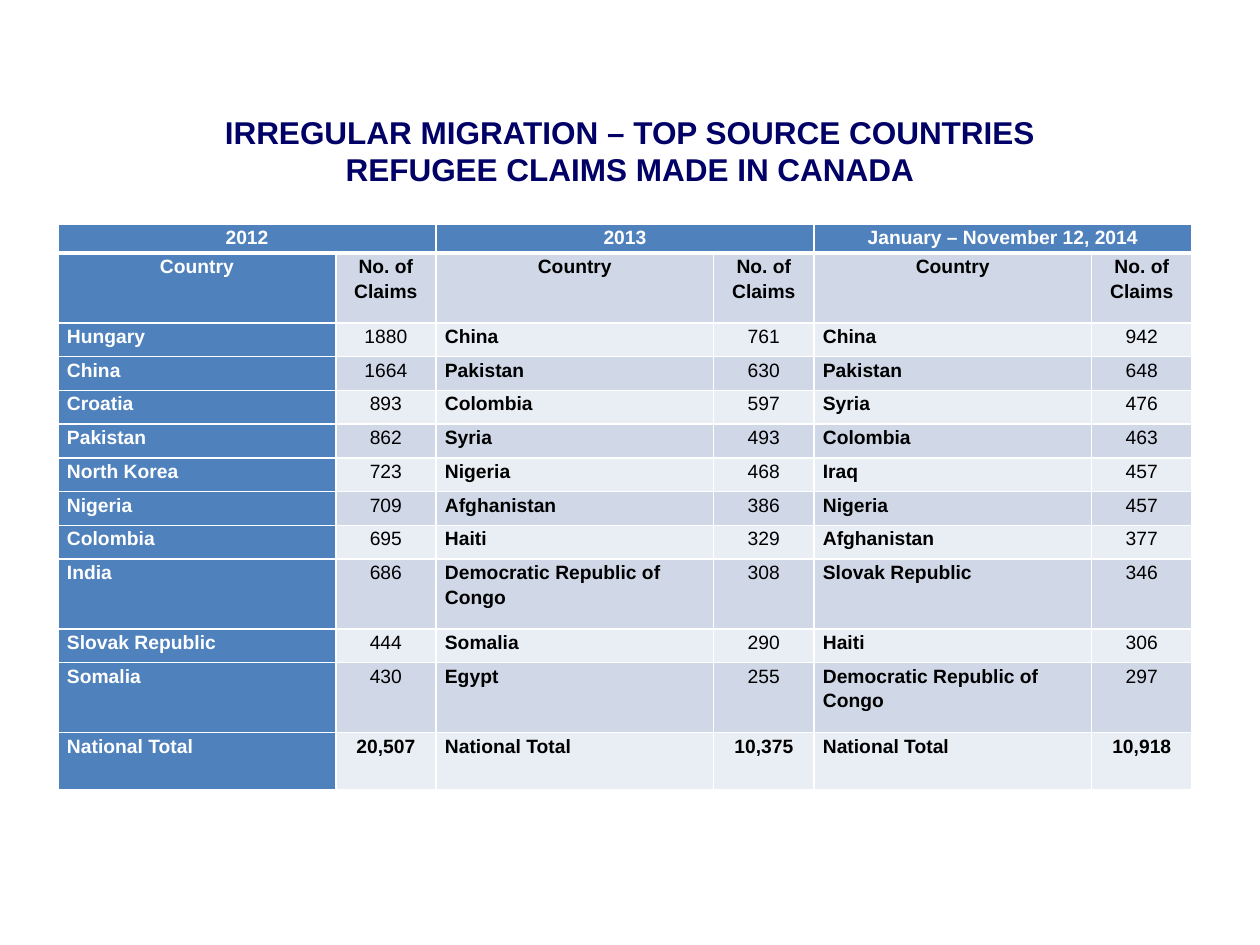
from dataclasses import dataclass

import pptx
import pptx.dml.color
import pptx.enum.text
import pptx.oxml
import pptx.oxml.ns
import pptx.util
from pptx.util import Cm

RGB = pptx.dml.color.RGBColor.from_string
CENTER = pptx.enum.text.PP_ALIGN.CENTER
LEFT = pptx.enum.text.PP_ALIGN.LEFT


@dataclass(frozen=True)
class Theme:
    font: str = "Arial"
    title_size: int = 18
    table_size: int = 11
    title: str = "000066"
    header: str = "4F81BD"
    dark_band: str = "D0D8E8"
    light_band: str = "E9EDF4"
    on_header: str = "FFFFFF"
    body: str = "000000"
    grid: str = "FFFFFF"
    grid_width: int = 1
    header_rule_width: int = 3


THEME = Theme()

TITLE_LINES = (
    "IRREGULAR MIGRATION – TOP SOURCE COUNTRIES",
    "REFUGEE CLAIMS MADE IN CANADA",
)
PERIODS = ("2012", "2013", "January – November 12, 2014")
CLAIMS = (
    ("Hungary", "1880", "China", "761", "China", "942"),
    ("China", "1664", "Pakistan", "630", "Pakistan", "648"),
    ("Croatia", "893", "Colombia", "597", "Syria", "476"),
    ("Pakistan", "862", "Syria", "493", "Colombia", "463"),
    ("North Korea", "723", "Nigeria", "468", "Iraq", "457"),
    ("Nigeria", "709", "Afghanistan", "386", "Nigeria", "457"),
    ("Colombia", "695", "Haiti", "329", "Afghanistan", "377"),
    ("India", "686", "Democratic Republic of Congo", "308", "Slovak Republic", "346"),
    ("Slovak Republic", "444", "Somalia", "290", "Haiti", "306"),
    ("Somalia", "430", "Egypt", "255", "Democratic Republic of Congo", "297"),
)
TOTALS = ("National Total", "20,507", "National Total", "10,375",
          "National Total", "10,918")

COUNTRY_WIDTH, CLAIMS_WIDTH = 5.6, 2.02
PERIOD_HEIGHT, LINE_HEIGHT, TALL_HEIGHT, TOTAL_HEIGHT = 0.58, 0.68, 1.41, 1.15
LONG_NAME = 20  # longer country names wrap and need a tall row


def add_run(paragraph, text, size, color, bold):
    run = paragraph.add_run()
    run.text = text
    run.font.name = THEME.font
    run.font.size = pptx.util.Pt(size)
    run.font.bold = bold
    run.font.color.rgb = RGB(color)


def add_title(slide):
    title = slide.shapes.title
    title.left, title.top = Cm(1.27), Cm(2.13)
    title.width, title.height = Cm(22.86), Cm(1.8)
    frame = title.text_frame
    frame.word_wrap = True
    frame.auto_size = pptx.enum.text.MSO_AUTO_SIZE.NONE
    frame.vertical_anchor = pptx.enum.text.MSO_ANCHOR.MIDDLE
    paragraph = frame.paragraphs[0]
    paragraph.alignment = CENTER
    for number, line in enumerate(TITLE_LINES):
        if number:
            paragraph.add_line_break()
        add_run(paragraph, line, THEME.title_size, THEME.title, True)


def set_borders(cell, row):
    """Draw the white grid, with a heavier rule below the period row."""
    widths = dict.fromkeys(("lnL", "lnR", "lnT", "lnB"), THEME.grid_width)
    if row < 2:
        widths["lnB" if row == 0 else "lnT"] = THEME.header_rule_width
    properties = cell._tc.get_or_add_tcPr()
    for side, width in widths.items():
        properties.append(pptx.oxml.parse_xml(
            f'<a:{side} {pptx.oxml.ns.nsdecls("a")} w="{pptx.util.Pt(width)}">'
            f'<a:solidFill><a:srgbClr val="{THEME.grid}"/></a:solidFill>'
            f'</a:{side}>'))


def format_cell(cell, row, column):
    set_borders(cell, row)
    if row == 0 or column == 0:
        fill = THEME.header
    else:
        fill = THEME.dark_band if row % 2 else THEME.light_band
    cell.fill.solid()
    cell.fill.fore_color.rgb = RGB(fill)
    cell.margin_left = cell.margin_right = Cm(0.18)
    cell.margin_top = cell.margin_bottom = 0


def write_cell(cell, text, color, bold, alignment):
    paragraph = cell.text_frame.paragraphs[0]
    paragraph.alignment = alignment
    paragraph.line_spacing = 1.15
    add_run(paragraph, text, THEME.table_size, color, bold)


def row_heights():
    claim_heights = [
        TALL_HEIGHT if max(map(len, claims)) > LONG_NAME else LINE_HEIGHT
        for claims in CLAIMS
    ]
    return [PERIOD_HEIGHT, TALL_HEIGHT, *claim_heights, TOTAL_HEIGHT]


def add_claims_table(slide):
    heights = row_heights()
    widths = [COUNTRY_WIDTH, CLAIMS_WIDTH] * len(PERIODS)
    table = slide.shapes.add_table(
        len(heights), len(widths), Cm(1.17), Cm(4.52),
        Cm(sum(widths)), Cm(sum(heights))).table
    table.horz_banding = False
    for column, width in zip(table.columns, widths):
        column.width = Cm(width)
    for row, height in zip(table.rows, heights):
        row.height = Cm(height)
    for row in range(len(heights)):
        for column in range(len(widths)):
            format_cell(table.cell(row, column), row, column)

    for number, period in enumerate(PERIODS):
        first = table.cell(0, 2 * number)
        first.merge(table.cell(0, 2 * number + 1))
        write_cell(first, period, THEME.on_header, True, CENTER)

    headings = ("Country", "No. of Claims") * len(PERIODS)
    for row, texts in enumerate((headings, *CLAIMS, TOTALS), start=1):
        for column, text in enumerate(texts):
            is_country = column % 2 == 0
            color = THEME.body if column else THEME.on_header
            bold = is_country or texts in (headings, TOTALS)
            alignment = LEFT if is_country and row > 1 else CENTER
            write_cell(table.cell(row, column), text, color, bold, alignment)


def main():
    presentation = pptx.Presentation()
    presentation.slide_width, presentation.slide_height = Cm(25.4), Cm(19.05)
    title_only = presentation.slide_layouts.get_by_name("Title Only")
    slide = presentation.slides.add_slide(title_only)
    add_title(slide)
    add_claims_table(slide)
    presentation.save("out.pptx")


if __name__ == "__main__":
    main()
